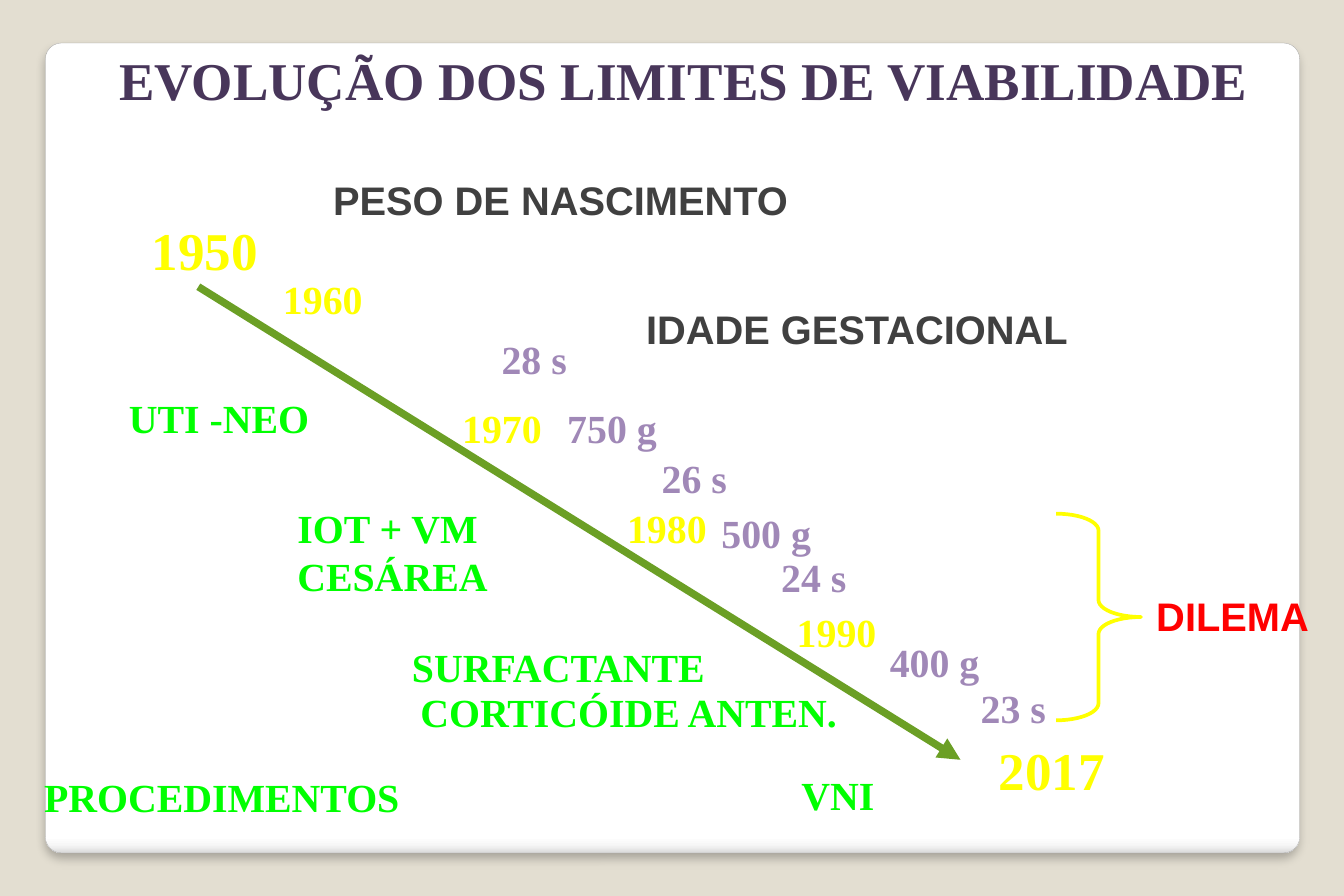
from lxml import etree
from pptx import Presentation, util as u
from pptx.dml.color import RGBColor
from pptx.enum import shapes, text
from pptx.oxml import parse_xml
from pptx.oxml.ns import nsdecls, qn

PX = u.Inches(1) // 100
SERIF, SANS = "Times New Roman", "Arial"
BEIGE = RGBColor(0xE3, 0xDE, 0xD1)
EDGE_GRAY = RGBColor(0xA4, 0xA4, 0xA4)
PLUM = RGBColor(0x48, 0x36, 0x5A)
LILAC = RGBColor(0xA0, 0x88, 0xB7)
CHARCOAL = RGBColor(0x40, 0x40, 0x40)
YELLOW = RGBColor(0xFF, 0xFF, 0x00)
LIME = RGBColor(0x00, 0xFF, 0x00)
OLIVE = RGBColor(0x6B, 0x9F, 0x25)
RED = RGBColor(0xFF, 0x00, 0x00)
CARD_STOPS = [(0, "FFFFFF"), (98, "FFFFFF"), (99, "F7F7F7"), (100, "DADADA")]


def px(*lengths):
    return [length * PX for length in lengths]


def add_label(slide, left, top, width, wording, color, size=24, font=SERIF):
    lines = wording.count("\n") + 1
    height = 11 + lines * size * 5 // 3
    label = slide.shapes.add_textbox(*px(left, top, width, height))
    frame = label.text_frame
    frame.text = wording
    frame.word_wrap = False
    frame.auto_size = text.MSO_AUTO_SIZE.SHAPE_TO_FIT_TEXT
    for paragraph in frame.paragraphs:
        for run in paragraph.runs:
            run.font.name = font
            run.font.size = u.Pt(size)
            run.font.bold = True
            run.font.color.rgb = color


def add_card(slide, left, top, width, height):
    card = slide.shapes.add_shape(shapes.MSO_SHAPE.ROUNDED_RECTANGLE,
                                  *px(left, top, width, height))
    card.adjustments[0] = 0.02
    card.line.color.rgb = EDGE_GRAY
    card.line.width = u.Pt(0.16)
    stops = "".join(f'<a:gs pos="{pos * 1000}"><a:srgbClr val="{color}"/></a:gs>'
                    for pos, color in CARD_STOPS)
    gradient = parse_xml(f'<a:gradFill {nsdecls("a")}><a:gsLst>{stops}</a:gsLst>'
                         '<a:lin ang="5400000" scaled="0"/></a:gradFill>')
    shadow = parse_xml(f'<a:effectLst {nsdecls("a")}>'
                       f'<a:outerShdw blurRad="{u.Pt(6)}" dist="{u.Pt(4)}" dir="5400000">'
                       '<a:srgbClr val="000000"><a:alpha val="25000"/></a:srgbClr>'
                       '</a:outerShdw></a:effectLst>')
    outline = card.line._get_or_add_ln()
    outline.addprevious(gradient)
    outline.addnext(shadow)


def add_title(slide, left, top, width):
    add_label(slide, left, top, width, "EVOLUÇÃO DOS LIMITES DE VIABILIDADE", PLUM, 32)


def add_timeline(slide, left, top):
    """Descending arrow with its years, birth weights and gestational ages."""
    arrow = slide.shapes.add_connector(
        shapes.MSO_CONNECTOR.STRAIGHT,
        *px(left + 49, top + 98, left + 687, top + 494))
    arrow.line.color.rgb = OLIVE
    arrow.line.width = u.Pt(4.5)
    etree.SubElement(arrow.line._get_or_add_ln(), qn("a:tailEnd"), type="triangle")
    etree.SubElement(arrow._element.spPr, qn("a:effectLst"))

    for x, y, year in [(0, 35, "1950"), (709, 470, "2017")]:
        add_label(slide, left + x, top + y, 110, year, YELLOW, 32)
    for x, y, width, heading in [(152, 0, 403, "PESO DE NASCIMENTO"),
                                 (414, 108, 390, "IDADE GESTACIONAL")]:
        add_label(slide, left + x, top + y, width, heading, CHARCOAL, font=SANS)
    for x, y, year in [(110, 83, "1960"), (260, 191, "1970"),
                       (398, 275, "1980"), (540, 362, "1990")]:
        add_label(slide, left + x, top + y, 88, year, YELLOW)
    for x, y, age in [(293, 133, "28 s"), (427, 233, "26 s"),
                      (527, 316, "24 s"), (694, 425, "23 s")]:
        add_label(slide, left + x, top + y, 75, age, LILAC)
    for x, y, weight in [(348, 191, "750 g"), (477, 279, "500 g"), (618, 387, "400 g")]:
        add_label(slide, left + x, top + y, 96, weight, LILAC)


def add_procedures(slide, left, top):
    for x, y, width, procedure in [
            (71, 0, 173, "UTI -NEO"),
            (212, 92, 181, "IOT + VM\nCESÁREA"),
            (308, 208, 268, "SURFACTANTE"),
            (315, 246, 373, "CORTICÓIDE ANTEN."),
            (634, 315, 82, "VNI"),
            (0, 317, 321, "PROCEDIMENTOS")]:
        add_label(slide, left + x, top + y, width, procedure, LIME)


def add_dilemma(slide, left, top, height):
    brace = slide.shapes.add_shape(shapes.MSO_SHAPE.RIGHT_BRACE,
                                   *px(left, top, 71, height))
    brace.adjustments[0] = 0.2
    brace.shadow.inherit = False
    brace.fill.background()
    brace.line.color.rgb = YELLOW
    brace.line.width = u.Pt(2.25)
    add_label(slide, left + 74, top + 60, 149, "DILEMA", RED, font=SANS)


def main():
    deck = Presentation()
    deck.slide_width, deck.slide_height = px(1125, 750)
    slide = deck.slides.add_slide(deck.slide_layouts[6])
    slide.background.fill.solid()
    slide.background.fill.fore_color.rgb = BEIGE
    add_card(slide, 38, 36, 1050, 678)
    add_title(slide, 90, 35, 986)
    add_timeline(slide, 117, 142)
    add_procedures(slide, 27, 325)
    add_dilemma(slide, 884, 430, 173)
    deck.save("out.pptx")


if __name__ == "__main__":
    main()
